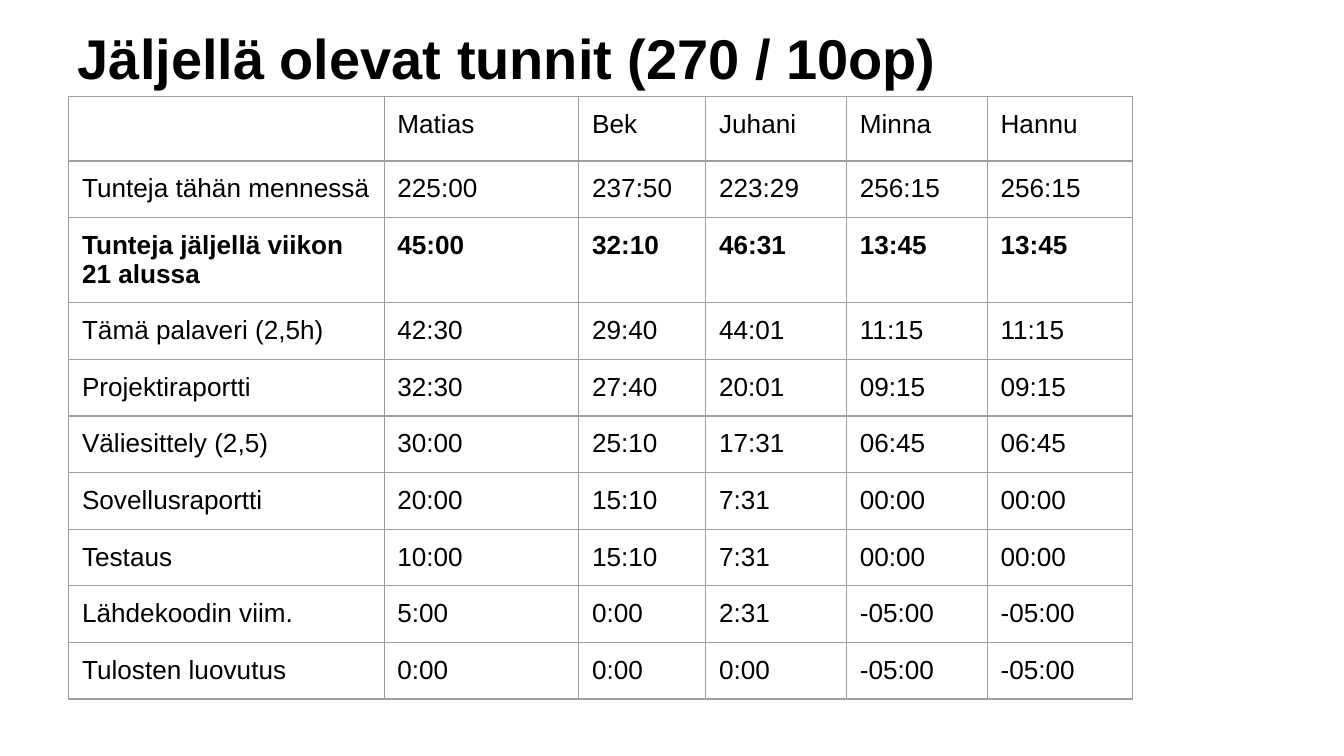
import dataclasses

import lxml.etree
import pptx
import pptx.dml.color
import pptx.enum.text
import pptx.oxml.ns
import pptx.util

Cm = pptx.util.Cm
Pt = pptx.util.Pt
qn = pptx.oxml.ns.qn


@dataclasses.dataclass(frozen=True)
class Theme:
    typeface: str = "Arial"
    ink: str = "000000"
    grid: str = "9E9E9E"
    title_size: int = 30
    cell_size: int = 14
    blank_size: int = 18
    grid_width: float = 0.75
    inset: float = 0.25


THEME = Theme()
INSETS = {
    f"margin_{side}": Cm(THEME.inset) for side in ("left", "top", "right", "bottom")
}
HEADLINE = "Jäljellä olevat tunnit (270 / 10op)"
COLUMN_WIDTHS = (5.96, 3.68, 2.4, 2.66, 2.66, 2.74)
ROW_HEIGHT = 1.07
REMAINING_ROW = 2
HOURS = (
    ("", "Matias", "Bek", "Juhani", "Minna", "Hannu"),
    ("Tunteja tähän mennessä", "225:00", "237:50", "223:29", "256:15", "256:15"),
    ("Tunteja jäljellä viikon 21 alussa", "45:00", "32:10", "46:31", "13:45", "13:45"),
    ("Tämä palaveri (2,5h)", "42:30", "29:40", "44:01", "11:15", "11:15"),
    ("Projektiraportti", "32:30", "27:40", "20:01", "09:15", "09:15"),
    ("Väliesittely (2,5)", "30:00", "25:10", "17:31", "06:45", "06:45"),
    ("Sovellusraportti", "20:00", "15:10", "7:31", "00:00", "00:00"),
    ("Testaus", "10:00", "15:10", "7:31", "00:00", "00:00"),
    ("Lähdekoodin viim.", "5:00", "0:00", "2:31", "-05:00", "-05:00"),
    ("Tulosten luovutus", "0:00", "0:00", "0:00", "-05:00", "-05:00"),
)


def apply_format(target, values):
    for attribute, value in values.items():
        setattr(target, attribute, value)


def write_text(paragraph, wording, size, bold):
    paragraph.alignment = pptx.enum.text.PP_ALIGN.LEFT
    run = paragraph.add_run()
    run.text = wording
    apply_format(run.font, {"name": THEME.typeface, "size": Pt(size), "bold": bold})
    run.font.color.rgb = pptx.dml.color.RGBColor.from_string(THEME.ink)


def size_blank(paragraph):
    ending = lxml.etree.SubElement(
        paragraph._p, qn("a:endParaRPr"), sz=str(THEME.blank_size * 100)
    )
    lxml.etree.SubElement(ending, qn("a:latin"), typeface=THEME.typeface)


def draw_borders(cell):
    properties = cell._tc.get_or_add_tcPr()
    for position, edge in enumerate(("a:lnL", "a:lnR", "a:lnT", "a:lnB")):
        border = lxml.etree.Element(qn(edge), w=str(Pt(THEME.grid_width)))
        paint = lxml.etree.SubElement(border, qn("a:solidFill"))
        lxml.etree.SubElement(paint, qn("a:srgbClr"), val=THEME.grid)
        properties.insert(position, border)


def add_headline(slide):
    headline = slide.shapes.title
    apply_format(headline, {
        "left": Cm(1.22), "top": Cm(0.18), "width": Cm(22.78), "height": Cm(1.78),
    })
    apply_format(headline.text_frame, {
        **INSETS,
        "word_wrap": True,
        "auto_size": pptx.enum.text.MSO_AUTO_SIZE.NONE,
        "vertical_anchor": pptx.enum.text.MSO_ANCHOR.BOTTOM,
    })
    write_text(headline.text_frame.paragraphs[0], HEADLINE, THEME.title_size, True)


def fill_cell(cell, wording, bold):
    apply_format(cell, {**INSETS, "vertical_anchor": pptx.enum.text.MSO_ANCHOR.TOP})
    cell.fill.background()
    draw_borders(cell)
    paragraph = cell.text_frame.paragraphs[0]
    if wording:
        write_text(paragraph, wording, THEME.cell_size, bold)
    else:
        size_blank(paragraph)


def add_hours_table(slide):
    hours = slide.shapes.add_table(
        len(HOURS), len(COLUMN_WIDTHS), Cm(1.3), Cm(1.83),
        Cm(sum(COLUMN_WIDTHS)), Cm(ROW_HEIGHT * len(HOURS)),
    ).table
    apply_format(hours, {"first_row": False, "horz_banding": False})
    for column, width in zip(hours.columns, COLUMN_WIDTHS):
        column.width = Cm(width)
    for row_number, (row, entries) in enumerate(zip(hours.rows, HOURS)):
        row.height = Cm(ROW_HEIGHT)
        for cell, wording in zip(row.cells, entries):
            fill_cell(cell, wording, row_number == REMAINING_ROW)


def main():
    deck = pptx.Presentation()
    apply_format(deck, {"slide_width": Cm(25.4), "slide_height": Cm(14.29)})
    slide = deck.slides.add_slide(deck.slide_layouts.get_by_name("Title Only"))
    add_headline(slide)
    add_hours_table(slide)
    deck.save("out.pptx")


if __name__ == "__main__":
    main()
